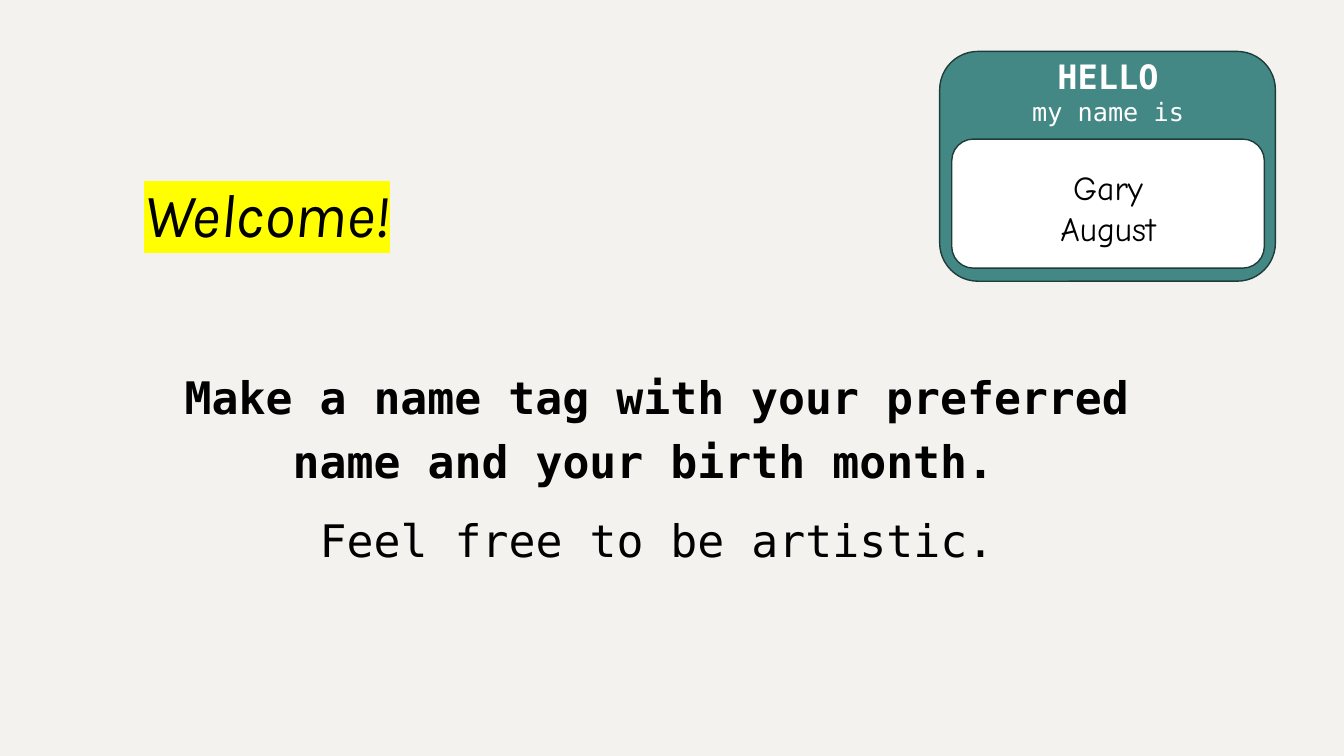
from lxml.etree import SubElement
from pptx import Presentation
from pptx.dml.color import RGBColor
from pptx.enum.shapes import MSO_SHAPE
from pptx.enum.text import MSO_ANCHOR, PP_ALIGN
from pptx.oxml.ns import qn
from pptx.util import Inches, Pt

THEME = {
    "paper": "F3F2EE", "ink": "000000", "white": "FFFFFF",
    "teal": "448885", "outline": "1E3C3A", "marker": "FFFF00",
    "heading": "Karla", "mono": "DejaVu Sans Mono", "hand": "Comic Neue",
    "title": 44, "body": 32, "name": 24, "small": 18,
}

# Each line: text, font, size, colour, bold
WELCOME = [("Welcome!", "heading", "title", "ink", False)]
TASK = [
    ("Make a name tag with your preferred name and your birth month. ",
     "mono", "body", "ink", True),
    ("Feel free to be artistic.", "mono", "body", "ink", False),
]
GREETING = [
    ("HELLO", "mono", "name", "white", True),
    ("my name is", "mono", "small", "white", False),
]
NAME_AND_MONTH = [
    (word, "hand", "name", "ink", False) for word in ("Gary", "August")
]

# Left, top, width, height in inches
WELCOME_AREA = (1.33, 0.87, 7.49, 1.66)
TASK_AREA = (1.33, 3.51, 10.38, 3.24)
TAG_PANELS = [
    ((9.32, 0.51, 3.33, 2.28), "teal"),
    ((9.44, 1.38, 3.1, 1.28), "white"),
]
GREETING_AREA = (9.3, 0.51, 3.38, 0.81)
NAME_AREA = (9.69, 1.61, 2.6, 0.91)


def colour(key):
    return RGBColor.from_string(THEME[key])


def add_lines(shapes, area, lines, align=PP_ALIGN.CENTER, spacing=1.0, gap=0):
    """Add a text box with one paragraph per line; gap separates paragraphs."""
    frame = shapes.add_textbox(*map(Inches, area)).text_frame
    frame.word_wrap = True
    frame.text = "\n".join(line[0] for line in lines)
    for index, (paragraph, line) in enumerate(zip(frame.paragraphs, lines)):
        _, face, size, ink, bold = line
        paragraph.alignment = align
        paragraph.line_spacing = spacing
        if index:
            paragraph.space_before = Pt(gap)
        font = paragraph.runs[0].font
        font.name = THEME[face]
        font.size = Pt(THEME[size])
        font.bold = bold
        font.color.rgb = colour(ink)
    return frame


def highlight(run, key):
    properties = run.font._element
    marker = SubElement(properties, qn("a:highlight"))
    SubElement(marker, qn("a:srgbClr"), val=THEME[key])
    properties.find(qn("a:solidFill")).addnext(marker)


def add_panel(shapes, area, fill):
    panel = shapes.add_shape(MSO_SHAPE.ROUNDED_RECTANGLE, *map(Inches, area))
    panel.shadow.inherit = False
    panel.fill.solid()
    panel.fill.fore_color.rgb = colour(fill)
    panel.line.color.rgb = colour("outline")
    panel.line.width = Pt(1)


def main():
    deck = Presentation()
    deck.slide_width, deck.slide_height = Inches(13.33), Inches(7.5)
    slide = deck.slides.add_slide(deck.slide_layouts[6])
    slide.background.fill.solid()
    slide.background.fill.fore_color.rgb = colour("paper")

    welcome = add_lines(slide.shapes, WELCOME_AREA, WELCOME,
                        align=PP_ALIGN.LEFT, spacing=1.2)
    welcome.vertical_anchor = MSO_ANCHOR.BOTTOM
    welcome_run = welcome.paragraphs[0].runs[0]
    welcome_run.font.italic = True
    highlight(welcome_run, "marker")

    add_lines(slide.shapes, TASK_AREA, TASK, spacing=1.2, gap=10)

    name_tag = slide.shapes.add_group_shape().shapes
    for area, fill in TAG_PANELS:
        add_panel(name_tag, area, fill)
    add_lines(name_tag, GREETING_AREA, GREETING)
    add_lines(name_tag, NAME_AREA, NAME_AND_MONTH)

    deck.save("out.pptx")


if __name__ == "__main__":
    main()
